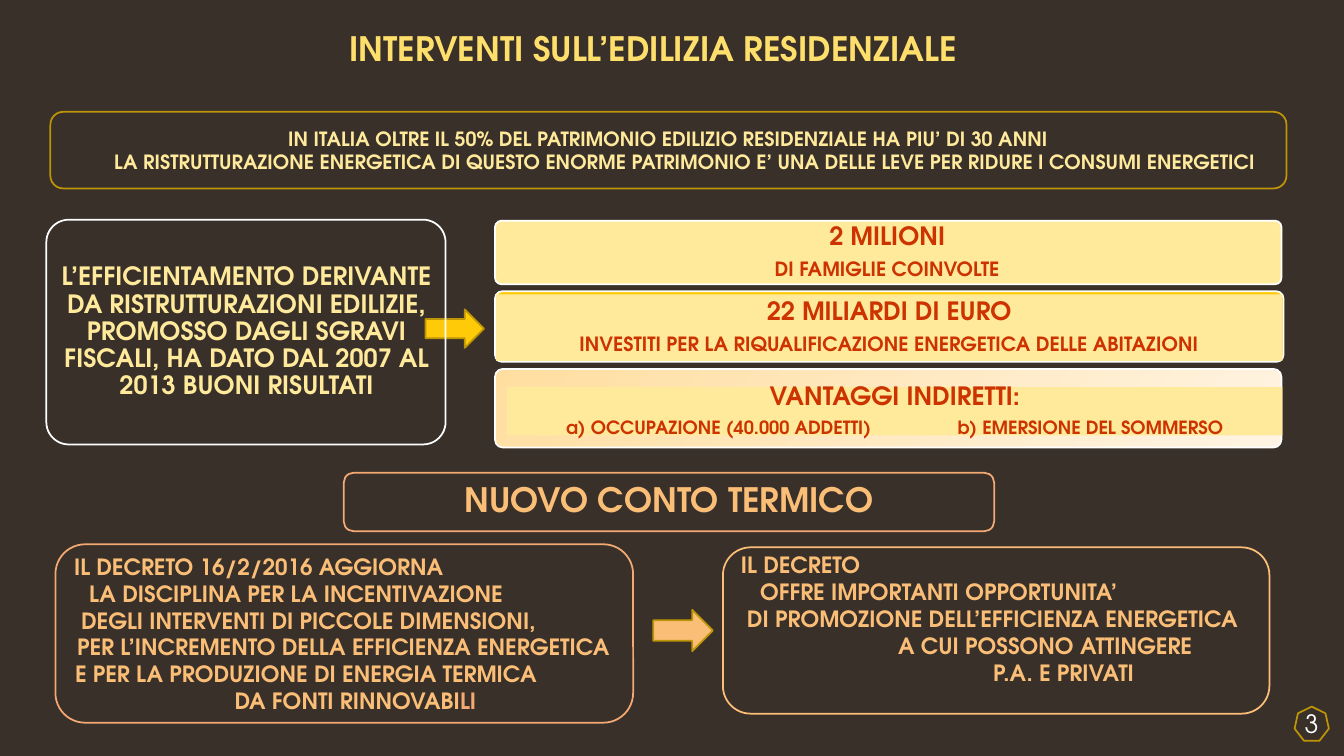
from dataclasses import dataclass

from lxml import etree
from pptx import Presentation
from pptx.dml.color import RGBColor
from pptx.enum.shapes import MSO_SHAPE
from pptx.enum.text import MSO_ANCHOR, PP_ALIGN
from pptx.oxml.ns import qn
from pptx.util import Emu, Inches, Pt

ROUND, RECT = MSO_SHAPE.ROUNDED_RECTANGLE, MSO_SHAPE.RECTANGLE
ARROW, HEPTAGON = MSO_SHAPE.RIGHT_ARROW, MSO_SHAPE.HEPTAGON
LEFT, CENTER = PP_ALIGN.LEFT, PP_ALIGN.CENTER
MIDDLE, BOTTOM = MSO_ANCHOR.MIDDLE, MSO_ANCHOR.BOTTOM

FONT = "TeX Gyre Adventor"
BROWN, GOLD, YELLOW, CREAM = "39302A", "BD9506", "FFCA08", "FFEA9C"
TITLE, PEACH, SALMON = "FFDF6B", "FBBE77", "F4A973"
WHITE, RED = "FFFFFF", "CC3300"

# Grid of 160 columns by 90 rows
CELL = Inches(1) / 12


@dataclass(frozen=True)
class Line:
    text: str
    size: float
    color: str
    indent: float = 0  # columns
    tail: str = ""  # last letters, in salmon
    bold: bool = True
    after: float = 0
    spacing: float = 1.0


@dataclass(frozen=True)
class Box:
    left: float
    top: float
    width: float
    height: float
    shape: int | None = ROUND  # None makes a text box
    fill: str | tuple[str, str] | None = None
    outline: str | None = None
    corner: float | None = None
    lines: tuple[Line, ...] = ()
    align: int = CENTER
    anchor: int = MIDDLE
    insets: tuple[float, float, float, float] = (1.2, 0.6, 1.2, 0.6)
    wrap: bool = True
    glow: bool = False  # soft shadow behind the text


def rgb(value: str) -> RGBColor:
    return RGBColor.from_string(value)


def cells(count: float) -> Emu:
    return Emu(round(count * CELL))


def add_text_shadow(span) -> None:
    effects = etree.SubElement(span.font.fill._xPr, qn("a:effectLst"))
    shadow = etree.Element(qn("a:outerShdw"), blurRad="38100", dist="25400", dir="2700000")
    color = etree.SubElement(shadow, qn("a:srgbClr"), val="000000")
    etree.SubElement(color, qn("a:alpha"), val="60000")
    effects.append(shadow)
    span.font.fill._xPr.find(qn("a:solidFill")).addnext(effects)


def write(frame, box: Box) -> None:
    frame.word_wrap = box.wrap
    frame.vertical_anchor = box.anchor
    (frame.margin_left, frame.margin_top,
     frame.margin_right, frame.margin_bottom) = map(cells, box.insets)
    frame.text = "\n".join(line.text for line in box.lines)
    for para, line in zip(frame.paragraphs, box.lines):
        para.alignment = box.align
        para.space_after = Pt(line.after)
        para.line_spacing = line.spacing
        if line.indent:
            para._p.get_or_add_pPr().set("marL", str(cells(line.indent)))
        if line.tail:
            para.add_run().text = line.tail
        for index, span in enumerate(para.runs):
            span.font.name = FONT
            span.font.size = Pt(line.size)
            span.font.bold = line.bold
            span.font.color.rgb = rgb(SALMON if index else line.color)
            if box.glow:
                add_text_shadow(span)


def draw(page, box: Box) -> None:
    place = [cells(n) for n in (box.left, box.top, box.width, box.height)]
    if box.shape is None:
        item = page.shapes.add_textbox(*place)
    else:
        item = page.shapes.add_shape(box.shape, *place)
        item.shadow.inherit = False
        if isinstance(box.fill, tuple):
            item.fill.gradient()
            item.fill.gradient_angle = 315
            for stop, color in zip(item.fill.gradient_stops, box.fill):
                stop.color.rgb = rgb(color)
        elif box.fill:
            item.fill.solid()
            item.fill.fore_color.rgb = rgb(box.fill)
        else:
            item.fill.background()
        if box.outline:
            item.line.color.rgb = rgb(box.outline)
            item.line.width = Pt(1.25)
        else:
            item.line.fill.background()
        if box.corner is not None:
            item.adjustments[0] = box.corner
    if box.lines:
        write(item.text_frame, box)


def result(heading: str, detail: str) -> tuple[Line, ...]:
    return (Line(heading, 18, RED, after=6, spacing=0.9),
            Line(detail, 14, RED, spacing=0.9))


def stepped(*rows: tuple[str, float], tail: str = "") -> tuple[Line, ...]:
    last = len(rows) - 1
    return tuple(Line(text, 16, PEACH, indent, tail if index == last else "")
                 for index, (text, indent) in enumerate(rows))


BOXES = (
    # Title and opening statement
    Box(21.72, 1.8, 112, 6.96, None, anchor=BOTTOM, glow=True,
        lines=(Line("INTERVENTI SULL’EDILIZIA RESIDENZIALE", 24, TITLE),)),
    Box(6, 13.32, 147.12, 9.12, outline=GOLD, lines=(
        Line("IN ITALIA OLTRE IL 50% DEL PATRIMONIO EDILIZIO RESIDENZIALE HA PIU’ DI 30 ANNI",
             14, CREAM),
        Line("LA RISTRUTTURAZIONE ENERGETICA DI QUESTO ENORME PATRIMONIO E’ UNA DELLE LEVE "
             "PER RIDURE I CONSUMI ENERGETICI", 14, CREAM, indent=4))),
    # Tax relief and its arrow
    Box(50.64, 36.84, 6.96, 4.56, ARROW, YELLOW, GOLD),
    Box(5.52, 26.16, 47.52, 26.76, outline=WHITE, corner=0.1),
    Box(6.96, 26.64, 44.76, 25.8, None, insets=(0.24,) * 4, lines=(
        Line("L’EFFICIENTAMENTO DERIVANTE DA RISTRUTTURAZIONI EDILIZIE, PROMOSSO DAGLI SGRAVI "
             "FISCALI, HA DATO DAL 2007 AL 2013 BUONI RISULTATI", 18, CREAM, spacing=0.9),)),
    # Results
    Box(58.92, 34.68, 93.84, 8.4, fill=YELLOW, outline=WHITE, corner=0.1),
    Box(59.04, 35.04, 93.6, 7.92, RECT, CREAM, insets=(0.6,) * 4,
        lines=result("22 MILIARDI DI EURO",
                     "INVESTITI PER LA RIQUALIFICAZIONE ENERGETICA DELLE ABITAZIONI")),
    Box(58.92, 26.28, 93.6, 7.56, fill=CREAM, outline=WHITE, corner=0.1),
    Box(60.84, 26.52, 89.52, 7.08, RECT, CREAM, insets=(0.84,) * 4,
        lines=result("2 MILIONI", "DI FAMIGLIE COINVOLTE")),
    Box(58.92, 43.92, 93.6, 9.36, fill=("FFDEA0", "FFF4E3"), outline=WHITE, corner=0.1),
    Box(60.36, 46.08, 92.28, 5.76, RECT, CREAM),
    Box(60.36, 45.04, 92.28, 4, None, lines=(Line("VANTAGGI INDIRETTI:", 18, RED),)),
    Box(64.5, 48.9, 42, 4, None, lines=(Line("a) OCCUPAZIONE (40.000 ADDETTI)", 13, RED),)),
    Box(108.76, 48.9, 42, 4, None, lines=(Line("b) EMERSIONE DEL SOMMERSO", 13, RED),)),
    # New scheme and the decree
    Box(40.92, 56.28, 77.4, 6.96, outline=SALMON, insets=(1.2, 0.2, 1.2, 1),
        lines=(Line("NUOVO CONTO TERMICO", 24, PEACH),)),
    Box(6.6, 64.8, 68.76, 21.24, outline=SALMON, align=LEFT, insets=(1.2, 0.6, 0, 0.6),
        lines=stepped(("IL DECRETO 16/2/2016 AGGIORNA", 0),
                      ("LA DISCIPLINA PER LA INCENTIVAZIONE", 1.8),
                      ("DEGLI INTERVENTI DI PICCOLE DIMENSIONI,", 0.84),
                      ("PER L’INCREMENTO DELLA EFFICIENZA ENERGETICA", 0.36),
                      ("E PER LA PRODUZIONE DI ENERGIA TERMICA", 0.12),
                      ("DA FONTI RINNOVABI", 19.1), tail="LI")),
    Box(77.76, 72.6, 7.08, 4.92, ARROW, PEACH, GOLD),
    Box(86.04, 65.16, 65.04, 19.8, outline=PEACH, align=LEFT, insets=(1.2, 0.6, 0, 3.4),
        lines=stepped(("IL DECRETO", 0),
                      ("OFFRE IMPORTANTI OPPORTUNITA’", 2.28),
                      ("DI PROMOZIONE DELL’EFFICIENZA ENERGETICA", 0.72),
                      ("A CUI POSSONO ATTINGERE", 18.72),
                      ("P.A. E PRIVATI", 30))),
    # Page number
    Box(154.08, 84.12, 4.08, 4.08, HEPTAGON, outline=GOLD, insets=(0,) * 4, wrap=False,
        lines=(Line("3", 18, WHITE, bold=False),)),
)


def main() -> None:
    deck = Presentation()
    deck.slide_width, deck.slide_height = Inches(13.33), Inches(7.5)
    page = deck.slides.add_slide(deck.slide_layouts[6])
    page.background.fill.solid()
    page.background.fill.fore_color.rgb = rgb(BROWN)
    for box in BOXES:
        draw(page, box)
    deck.save("out.pptx")


if __name__ == "__main__":
    main()
